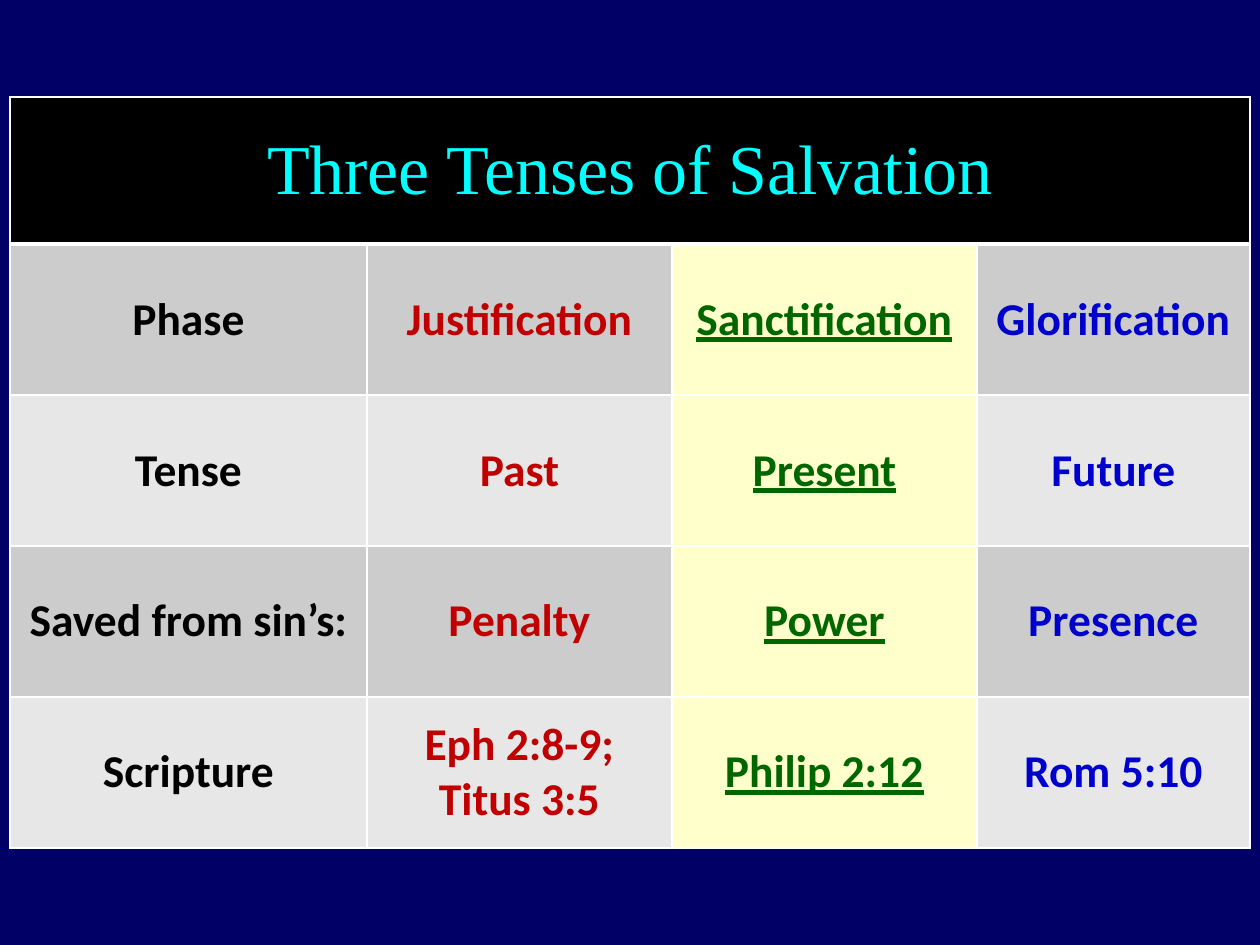
from dataclasses import dataclass

from lxml import etree
from pptx import Presentation, util as u
from pptx.dml.color import RGBColor
from pptx.enum import text
from pptx.oxml import ns

PX = u.Inches(1) / 126


@dataclass
class Theme:
    background = "000066"
    title_fill = "000000"
    title_text = "00FFFF"
    border = "FFFFFF"
    bands = ("CCCCCC", "E7E7E7")
    highlight = "FFFFCC"
    column_text = ("000000", "C00000", "006600", "0000CC")
    title_font = "Times New Roman"
    body_font = "Calibri"
    title_size = 40
    body_size = 26
    thin = 1
    thick = 3


theme = Theme()
TITLE = "Three Tenses of Salvation"
ROWS = [
    ("Phase", "Justification", "Sanctification", "Glorification"),
    ("Tense", "Past", "Present", "Future"),
    ("Saved from sin’s:", "Penalty", "Power", "Presence"),
    ("Scripture", "Eph 2:8-9; Titus 3:5", "Philip 2:12", "Rom 5:10"),
]
COL_WIDTHS = (357, 305, 305, 273)
ROW_HEIGHTS = (147,) + (151,) * len(ROWS)
HIGHLIGHT_COL = 2


def px(n):
    return u.Emu(round(n * PX))


def style_cell(cell, fill, **widths):
    """Draw the four borders, then fill; widths overrides sides L, R, T, B in points."""
    tc_pr = cell._tc.get_or_add_tcPr()
    for side in "LRTB":
        width = u.Pt(widths.get(side, theme.thin))
        ln = etree.SubElement(tc_pr, ns.qn(f"a:ln{side}"), w=str(width))
        solid = etree.SubElement(ln, ns.qn("a:solidFill"))
        etree.SubElement(solid, ns.qn("a:srgbClr"), val=theme.border)
    cell.fill.solid()
    cell.fill.fore_color.rgb = RGBColor.from_string(fill)
    cell.vertical_anchor = text.MSO_ANCHOR.MIDDLE


prs = Presentation()
prs.slide_width, prs.slide_height = px(1260), px(945)
s = prs.slides.add_slide(prs.slide_layouts[6])
s.background.fill.solid()
s.background.fill.fore_color.rgb = RGBColor.from_string(theme.background)

table = s.shapes.add_table(len(ROW_HEIGHTS), len(COL_WIDTHS), px(10), px(97),
                           px(sum(COL_WIDTHS)), px(sum(ROW_HEIGHTS))).table
for column, width in zip(table.columns, COL_WIDTHS):
    column.width = px(width)
for row, height in zip(table.rows, ROW_HEIGHTS):
    row.height = px(height)

# Title row across all columns
title = table.cell(0, 0)
title.merge(table.cell(0, len(COL_WIDTHS) - 1))
for cell in table.rows[0].cells:
    style_cell(cell, theme.title_fill, B=theme.thick)
p = title.text_frame.paragraphs[0]
p.text = TITLE
p.alignment = text.PP_ALIGN.CENTER
font = p.runs[0].font
font.name, font.size, font.bold = theme.title_font, u.Pt(theme.title_size), False
font.color.rgb = RGBColor.from_string(theme.title_text)

# Banded body rows, one text colour per column
for i, labels in enumerate(ROWS):
    for j, label in enumerate(labels):
        cell = table.cell(i + 1, j)
        fill = theme.highlight if j == HIGHLIGHT_COL else theme.bands[i % 2]
        style_cell(cell, fill, T=theme.thick if i == 0 else theme.thin)
        p = cell.text_frame.paragraphs[0]
        p.text = label
        p.alignment = text.PP_ALIGN.CENTER
        font = p.runs[0].font
        font.name, font.size, font.bold = theme.body_font, u.Pt(theme.body_size), True
        font.underline = j == HIGHLIGHT_COL
        font.color.rgb = RGBColor.from_string(theme.column_text[j])

prs.save("out.pptx")
